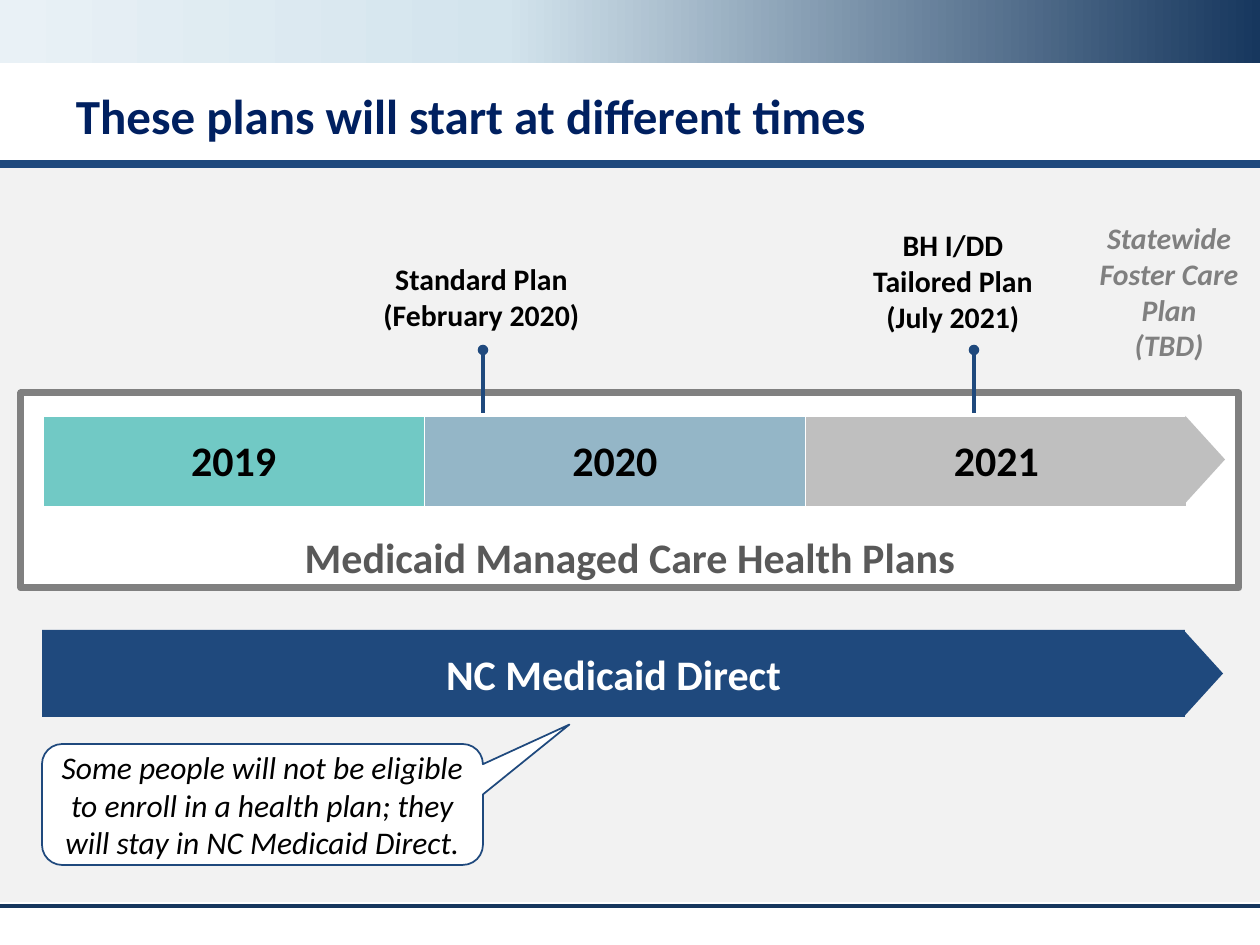
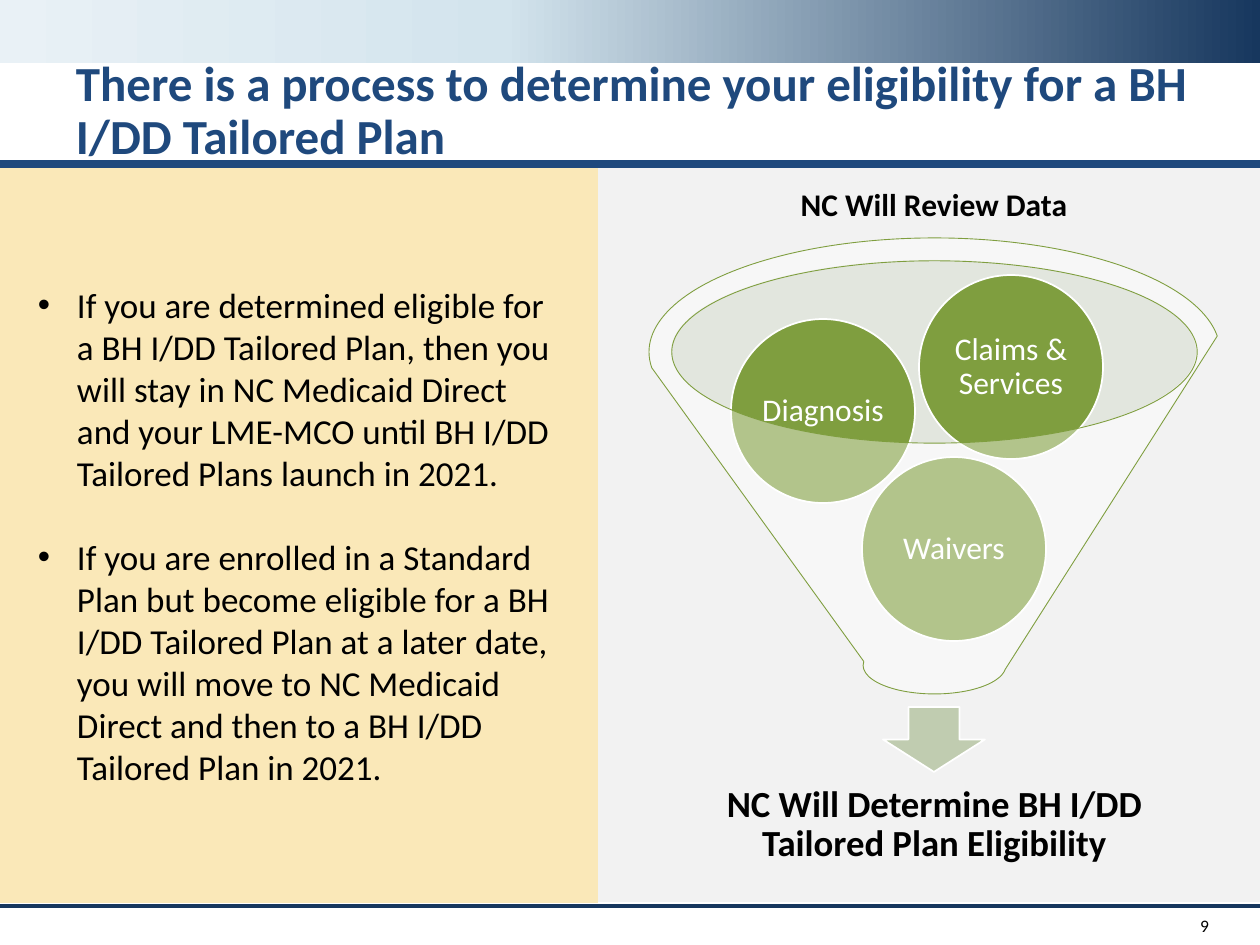
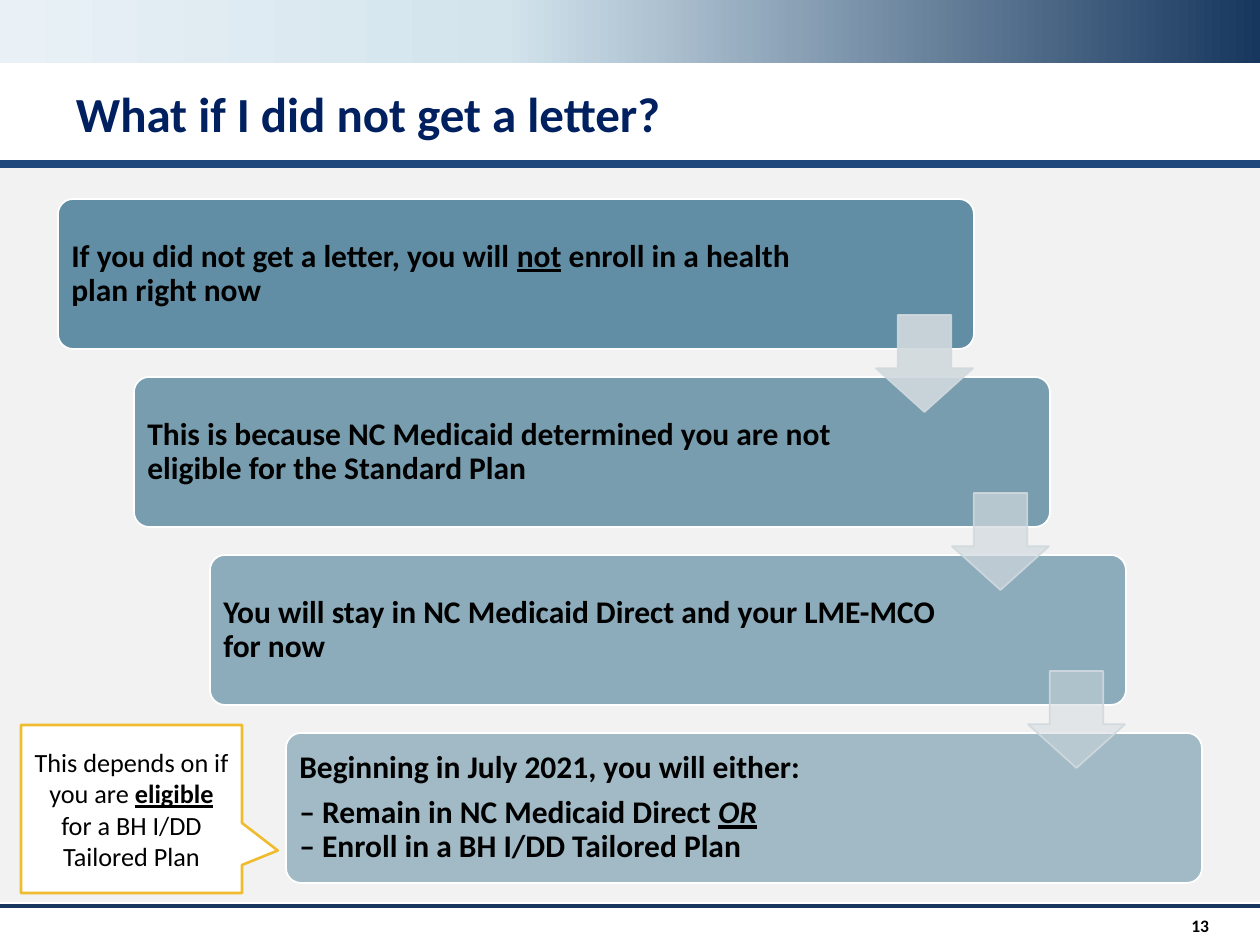
from lxml.etree import SubElement
from pptx import Presentation
from pptx.dml.color import RGBColor
from pptx.enum.shapes import MSO_CONNECTOR, MSO_SHAPE
from pptx.enum.text import MSO_ANCHOR, MSO_AUTO_SIZE, PP_ALIGN
from pptx.oxml.ns import qn
from pptx.util import Emu, Pt

FONT = "Calibri"
WIDE, HIGH = 1260, 945
HUES = {
    "navy": "002060", "blue": "1F497D", "deep": "17375E", "sky": "D3E4ED",
    "pale": "E9F1F6", "panel": "F2F2F2", "white": "FFFFFF", "black": "000000",
    "grey": "808080", "dark": "595959", "silver": "BFBFBF", "teal": "71C9C5",
    "steel": "94B6C7", "cream": "FAE8B8", "green": "7F9E3F", "sage": "C0CCB0",
    "mist": "CCD6C0", "slate": "52849C", "fog": "D1D9DE", "gold": "EFBB2F",
}


def px(num):
    return Emu(round(num * 914400 / 126))


def rgb(hue):
    return RGBColor.from_string(HUES[hue])


def say(frame, lines, size, hue="black", style="", align=PP_ALIGN.CENTER,
        anchor=MSO_ANCHOR.MIDDLE, pad=(13, 6, 13, 6), tight=None):
    """Write lines, each a string or a list of (text, style); style holds b, i, u."""
    frame.word_wrap = True
    frame.auto_size = MSO_AUTO_SIZE.NONE
    frame.vertical_anchor = anchor
    (frame.margin_left, frame.margin_top,
     frame.margin_right, frame.margin_bottom) = map(px, pad)
    for num, line in enumerate(lines):
        para = frame.add_paragraph() if num else frame.paragraphs[0]
        para.alignment = align
        if tight:
            para.line_spacing = tight
        for text, mark in [(line, "")] if isinstance(line, str) else line:
            run = para.add_run()
            run.text = text
            font = run.font
            font.name, font.size = FONT, Pt(size)
            font.color.rgb = rgb(hue)
            font.bold = "b" in style + mark
            font.italic = "i" in style + mark
            font.underline = "u" in mark


def fade(node, part):
    """Make the solid fill under node opaque by part percent."""
    tint = node.find(qn("a:solidFill")).find(qn("a:srgbClr"))
    SubElement(tint, qn("a:alpha"), val=str(part * 1000))


def draw(slide, kind, box, fill, edge=None, thick=1, adj=(), part=None):
    shape = slide.shapes.add_shape(kind, *map(px, box))
    shape.shadow.inherit = False
    shape.fill.solid()
    shape.fill.fore_color.rgb = rgb(fill)
    if part:
        fade(shape.element.spPr, part)
    if edge:
        shape.line.color.rgb = rgb(edge)
        shape.line.width = Pt(thick)
    else:
        shape.line.fill.background()
    for num, value in enumerate(adj):
        shape.adjustments[num] = value
    return shape


def note(slide, box, lines, size, **look):
    say(slide.shapes.add_textbox(*map(px, box)).text_frame, lines, size, **look)


def rule(slide, start, end, hue, thick, dot=False):
    line = slide.shapes.add_connector(MSO_CONNECTOR.STRAIGHT, *map(px, start + end))
    line.line.color.rgb = rgb(hue)
    line.line.width = Pt(thick)
    props = line.element.spPr
    if dot:
        SubElement(props.find(qn("a:ln")), qn("a:tailEnd"), type="oval")
    SubElement(props, qn("a:effectLst"))


def band(slide):
    top = draw(slide, MSO_SHAPE.RECTANGLE, (0, 0, WIDE, 63), "deep")
    top.fill.gradient()
    top.fill.gradient_angle = 180
    stops = top.element.spPr.find(qn("a:gradFill")).find(qn("a:gsLst"))
    for stop in list(stops):
        stops.remove(stop)
    for place, hue in ((0, "deep"), (60, "sky"), (100, "pale")):
        stop = SubElement(stops, qn("a:gs"), pos=str(place * 1000))
        SubElement(stop, qn("a:srgbClr"), val=HUES[hue])


def start(deck, title, top, wide=1134, hue="navy", page=None, style=""):
    """Add a slide with the shared band, panel, rules, title and page number."""
    slide = deck.slides.add_slide(deck.slide_layouts[5])
    band(slide)
    draw(slide, MSO_SHAPE.RECTANGLE, (0, 164, WIDE, 738), "panel")
    rule(slide, (0, 164), (WIDE, 164), "blue", 4.5)
    rule(slide, (0, 906), (WIDE, 906), "deep", 2.25)
    head = slide.shapes.title
    head.left, head.top, head.width, head.height = map(px, (63, top, wide, 76))
    say(head.text_frame, [title], 28, hue, "b", PP_ALIGN.LEFT, MSO_ANCHOR.TOP,
        tight=0.9)
    if page:
        note(slide, (1144, 906, 78, 39), [page], 10, style=style,
             align=PP_ALIGN.RIGHT)
    return slide


def years(slide, x, y, wide, high):
    cells = (("2019", "teal"), ("2020", "steel"), ("2021", "silver"))
    table = slide.shapes.add_table(1, len(cells), *map(px, (x, y, wide, high))).table
    table.first_row = table.horz_banding = False
    for num, (text, hue) in enumerate(cells):
        table.columns[num].width = px(wide / len(cells))
        cell = table.cell(0, num)
        for side, thick in (("L", 1), ("R", 1), ("T", 1), ("B", 3)):
            edge = SubElement(cell._tc.get_or_add_tcPr(), qn("a:ln" + side),
                              w=str(Pt(thick)))
            SubElement(SubElement(edge, qn("a:solidFill")), qn("a:srgbClr"),
                       val=HUES["white"])
        cell.fill.solid()
        cell.fill.fore_color.rgb = rgb(hue)
        cell.vertical_anchor = MSO_ANCHOR.MIDDLE
        para = cell.text_frame.paragraphs[0]
        para.alignment = PP_ALIGN.CENTER
        run = para.add_run()
        run.text = text
        run.font.name, run.font.size, run.font.bold = FONT, Pt(24), True
        run.font.color.rgb = rgb("black")
    tip(slide, x + wide - 41, y, "silver")


def tip(slide, x, y, hue):
    draw(slide, MSO_SHAPE.RIGHT_ARROW, (x, y, 79, 87), hue)


def times(deck):
    slide = start(deck, "These plans will start at different times", 86)
    frame = draw(slide, MSO_SHAPE.RECTANGLE, (21, 393, 1218, 195), "white", "grey", 4)
    say(frame.text_frame, ["Medicaid Managed Care Health Plans"], 24, "dark", "b",
        anchor=MSO_ANCHOR.BOTTOM)
    years(slide, 43, 416, 1144, 92)
    for x in (483, 974):
        rule(slide, (x, 413), (x, 350), "blue", 2, dot=True)
    rule(slide, (483, 413), (483, 363), "blue", 2.25)
    plans = (
        ((329, 255, 305, 84), ["Standard Plan (February 2020)"], "black", "b"),
        ((839, 221, 228, 121), ["BH I/DD Tailored Plan", "(July 2021)"], "black", "b"),
        ((1078, 214, 182, 158), ["Statewide Foster Care Plan", "(TBD)"], "grey", "bi"),
    )
    for box, lines, hue, style in plans:
        note(slide, box, lines, 17, hue=hue, style=style, anchor=MSO_ANCHOR.TOP)
    bar = draw(slide, MSO_SHAPE.RECTANGLE, (42, 630, 1143, 87), "blue")
    say(bar.text_frame, ["NC Medicaid Direct"], 24, "white", "b")
    tip(slide, 1144, 630, "blue")
    call = draw(slide, MSO_SHAPE.ROUNDED_RECTANGULAR_CALLOUT, (42, 744, 441, 121),
                "white", "blue", adj=(0.696, -0.661, 0.167))
    say(call.text_frame, ["Some people will not be eligible to enroll in a health "
                          "plan; they will stay in NC Medicaid Direct."],
        18, style="i")


def points(slide, box, lines):
    """Draw the cream side panel with its bullets."""
    frame = draw(slide, MSO_SHAPE.RECTANGLE, box, "cream").text_frame
    say(frame, lines, 20, align=PP_ALIGN.LEFT, pad=(38, 8, 38, 8))
    for num, para in enumerate(frame.paragraphs):
        if num:
            para.space_before = Pt(24)
        props = para._p.get_or_add_pPr()
        props.set("marL", str(px(39)))
        props.set("indent", str(px(-39)))
        SubElement(props, qn("a:buFont"), typeface="Arial")
        SubElement(props, qn("a:buChar"), char="•")


def funnel(slide, x, y):
    draw(slide, MSO_SHAPE.OVAL, (x + 22, y + 22, 525, 183), "mist", part=40)
    draw(slide, MSO_SHAPE.DOWN_ARROW, (x + 234, y + 469, 102, 65), "sage", "white")
    for left, top, text in ((213, 219, "Waivers"), (82, 81, "Diagnosis"),
                            (270, 37, "Claims & Services")):
        ball = draw(slide, MSO_SHAPE.OVAL, (x + left, y + top, 184, 184),
                    "green", "white")
        say(ball.text_frame, [text], 18, "white", pad=(4, 4, 4, 4), tight=0.9)
    draw(slide, MSO_SHAPE.FUNNEL, (x, y, 571, 456), "white", "green", 0.5, part=40)
    note(slide, (x + 41, y + 526, 489, 122),
         ["NC Will Determine BH I/DD Tailored Plan Eligibility"], 21,
         style="b", pad=(20, 20, 20, 20), tight=0.9)
    note(slide, (x + 117, y - 59, 336, 50), ["NC Will Review Data"], 18,
         style="b", anchor=MSO_ANCHOR.TOP)


def process(deck):
    slide = start(deck, "There is a process to determine your eligibility for a BH "
                  "I/DD Tailored Plan", 53, 1197, "blue", "9")
    points(slide, (0, 168, 598, 735), [
        "If you are determined eligible for a BH I/DD Tailored Plan, then you will "
        "stay in NC Medicaid Direct and your LME-MCO until BH I/DD Tailored Plans "
        "launch in 2021.",
        "If you are enrolled in a Standard Plan but become eligible for a BH I/DD "
        "Tailored Plan at a later date, you will move to NC Medicaid Direct and "
        "then to a BH I/DD Tailored Plan in 2021.",
    ])
    funnel(slide, 649, 238)


def steps(slide, x, y, rows):
    """Draw a stair of rows, each leading to the next by an arrow."""
    spots = [(x + 76 * num, y + 178 * num) for num in range(len(rows))]
    for (left, top), lines, part in zip(spots, rows, (90, 77, 63, 50)):
        row = draw(slide, MSO_SHAPE.ROUNDED_RECTANGLE, (left, top, 916, 150),
                   "slate", "white", adj=(0.1,), part=part)
        say(row.text_frame, lines, 18, style="b", align=PP_ALIGN.LEFT,
            pad=(9, 9, 176, 9), tight=0.9)
        if len(lines) > 1:
            row.text_frame.paragraphs[0].space_after = Pt(6.3)
    for (left, top), part in zip(spots, (90, 70, 50)):
        arrow = draw(slide, MSO_SHAPE.DOWN_ARROW, (left + 818, top + 116, 97, 97),
                     "fog", "fog", adj=(0.55, 0.45), part=part)
        fade(arrow.element.spPr.find(qn("a:ln")), 90)


def letter(deck):
    slide = start(deck, "What if I did not get a letter?", 84, page="13", style="b")
    steps(slide, 58, 199, [
        [[("If you did not get a letter, you will ", ""), ("not", "u"),
          (" enroll in a health plan right now", "")]],
        ["This is because NC Medicaid determined you are not eligible for the "
         "Standard Plan"],
        ["You will stay in NC Medicaid Direct and your LME-MCO for now"],
        ["Beginning in July 2021, you will either:",
         [("– Remain in NC Medicaid Direct ", ""), ("OR", "iu")],
         "– Enroll in a BH I/DD Tailored Plan"],
    ])
    call = draw(slide, MSO_SHAPE.RECTANGULAR_CALLOUT, (21, 725, 221, 168),
                "white", "gold", 1.5, (0.662, 0.247))
    say(call.text_frame, [[("This depends on if you are ", ""), ("eligible ", "bu"),
                           ("for a BH I/DD Tailored Plan", "")]], 15)


def main():
    deck = Presentation()
    deck.slide_width, deck.slide_height = px(WIDE), px(HIGH)
    for build in (times, process, letter):
        build(deck)
    deck.save("out.pptx")


if __name__ == "__main__":
    main()
